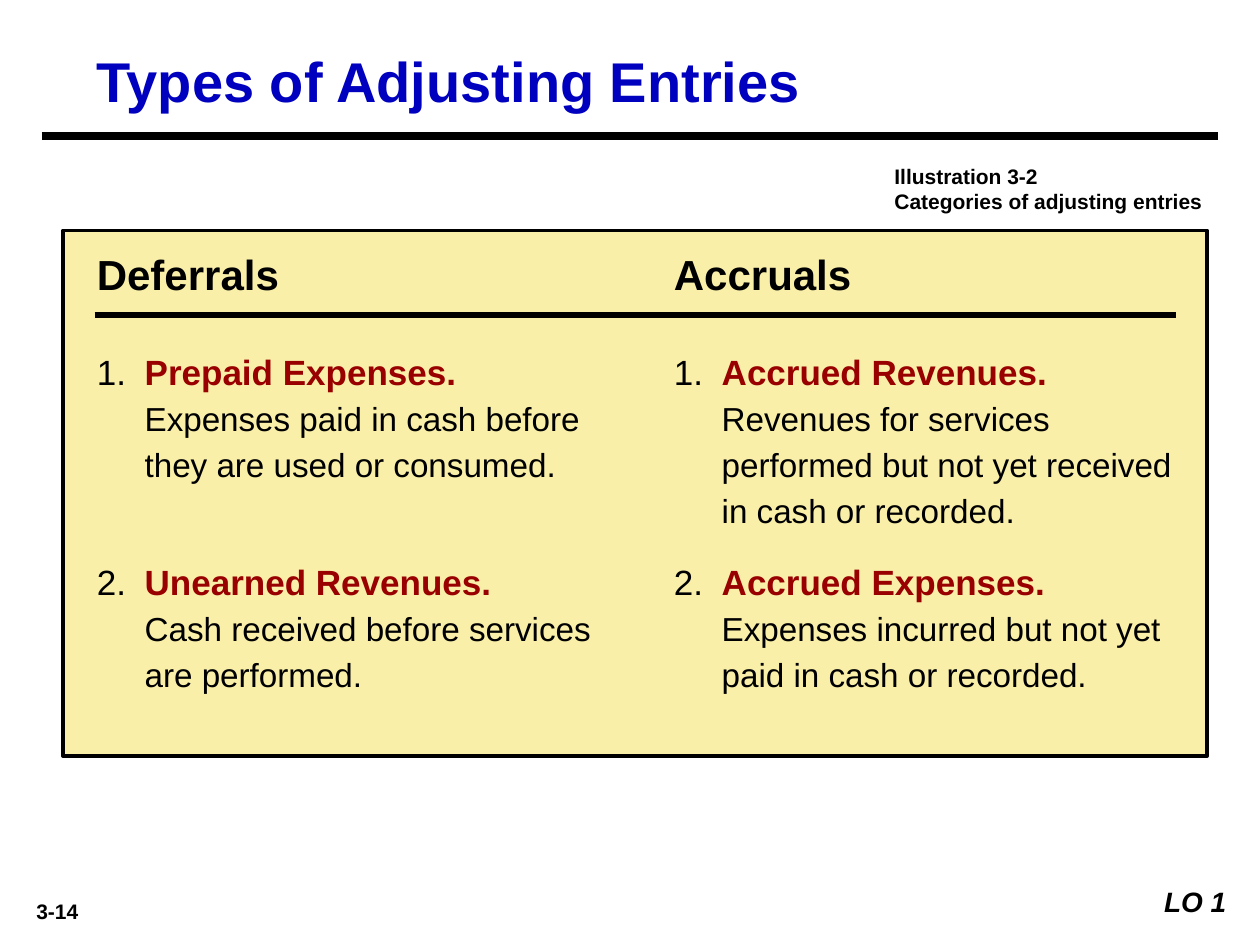
import pptx
import pptx.util
import pptx.dml.color
import pptx.enum.shapes
import pptx.enum.text
import lxml.etree

Inches, Pt = pptx.util.Inches, pptx.util.Pt
ALIGN, ANCHOR = pptx.enum.text.PP_ALIGN, pptx.enum.text.MSO_ANCHOR

THEME = {
    "font": "Arial", "black": "000000", "white": "FFFFFF", "panel": "F9EFA9",
    "title": "0000BF", "term": "990000",
    "title_size": 32, "head_size": 24, "term_size": 20, "body_size": 19,
    "objective_size": 16, "note_size": 12,
}
TITLE = "Types of Adjusting Entries"
CAPTION = ["Illustration 3-2", "Categories of adjusting entries"]
PAGE, OBJECTIVE = "3-14", "LO 1"
COLUMNS = [
    ("Deferrals", [
        ("Prepaid Expenses.", "Expenses paid in cash before they are used or consumed.", False),
        ("Unearned Revenues.", "Cash received before services are performed.", True),
    ]),
    ("Accruals", [
        ("Accrued Revenues.",
         "Revenues for services performed but not yet received in cash or recorded.", False),
        ("Accrued Expenses.", "Expenses incurred but not yet paid in cash or recorded.", False),
    ]),
]
COLUMN_LEFT, COLUMN_STEP = 0.67, 4.58
ITEM_TOP, ITEM_STEP = 2.58, 1.67
HANG = 0.38
RULES = [(0.33, 9.67, 1.08, 4.5), (0.75, 9.33, 2.5, 3)]


def rgb(name):
    return pptx.dml.color.RGBColor.from_string(THEME[name])


def add_run(p, text, size, color="black", bold=True, italic=False):
    r = p.add_run()
    r.text = text
    r.font.name, r.font.size = THEME["font"], Pt(THEME[size])
    r.font.bold, r.font.italic = bold, italic
    r.font.color.rgb = rgb(color)


def add_text(s, box, lines, size, color="black", align=ALIGN.LEFT,
             anchor=ANCHOR.TOP, wrap=True, italic=False):
    tf = s.shapes.add_textbox(*map(Inches, box)).text_frame
    tf.word_wrap, tf.vertical_anchor = wrap, anchor
    for i, line in enumerate(lines):
        p = tf.add_paragraph() if i else tf.paragraphs[0]
        p.alignment = align
        add_run(p, line, size, color, italic=italic)


def add_rule(s, left, right, y, width):
    line = s.shapes.add_connector(pptx.enum.shapes.MSO_CONNECTOR.STRAIGHT,
                                  Inches(left), Inches(y), Inches(right), Inches(y))
    line.line.color.rgb, line.line.width = rgb("black"), Pt(width)
    lxml.etree.SubElement(line._element.spPr, pptx.oxml.ns.qn("a:effectLst"))


def style_item(p, first_indent):
    p.line_spacing = 1.15
    pPr = p._p.get_or_add_pPr()
    pPr.set("marL", str(Inches(HANG)))
    pPr.set("indent", str(Inches(first_indent)))


def add_item(s, left, top, number, term, meaning, own_line):
    tf = s.shapes.add_textbox(*map(Inches, (left, top, 4.17, 1.75))).text_frame
    tf.word_wrap, tf.margin_top = True, Inches(0.15)
    p = tf.paragraphs[0]
    style_item(p, -HANG)
    add_run(p, f"{number}.\t", "term_size", bold=False)
    add_run(p, term if own_line else term + " ", "term_size", "term")
    if own_line:
        p = tf.add_paragraph()
        style_item(p, 0)
    add_run(p, meaning, "body_size", bold=False)


def main():
    """Build the slide on types of adjusting entries."""
    prs = pptx.Presentation()
    prs.slide_width, prs.slide_height = Inches(10), Inches(7.5)
    s = prs.slides.add_slide(prs.slide_layouts[6])
    s.background.fill.solid()
    s.background.fill.fore_color.rgb = rgb("white")

    add_text(s, (0.67, 0.33, 9, 0.61), [TITLE], "title_size", "title", anchor=ANCHOR.MIDDLE)
    add_text(s, (7, 1.25, 2.75, 0.5), CAPTION, "note_size")
    add_text(s, (0.08, 7.08, 0.75, 0.3), [PAGE], "note_size", align=ALIGN.CENTER)
    add_text(s, (8.83, 6.97, 1, 0.37), [OBJECTIVE], "objective_size",
             align=ALIGN.RIGHT, italic=True)

    panel = s.shapes.add_shape(pptx.enum.shapes.MSO_SHAPE.RECTANGLE,
                               *map(Inches, (0.5, 1.83, 9.08, 4.17)))
    panel.shadow.inherit = False
    panel.fill.solid()
    panel.fill.fore_color.rgb = rgb("panel")
    panel.line.color.rgb, panel.line.width = rgb("black"), Pt(2.25)
    for rule in RULES:
        add_rule(s, *rule)

    for col, (head, items) in enumerate(COLUMNS):
        left = COLUMN_LEFT + col * COLUMN_STEP
        add_text(s, (left, 1.92, 3.17, 0.5), [head], "head_size",
                 anchor=ANCHOR.MIDDLE, wrap=False)
        for row, item in enumerate(items):
            add_item(s, left, ITEM_TOP + row * ITEM_STEP, row + 1, *item)

    prs.save("out.pptx")


if __name__ == "__main__":
    main()
